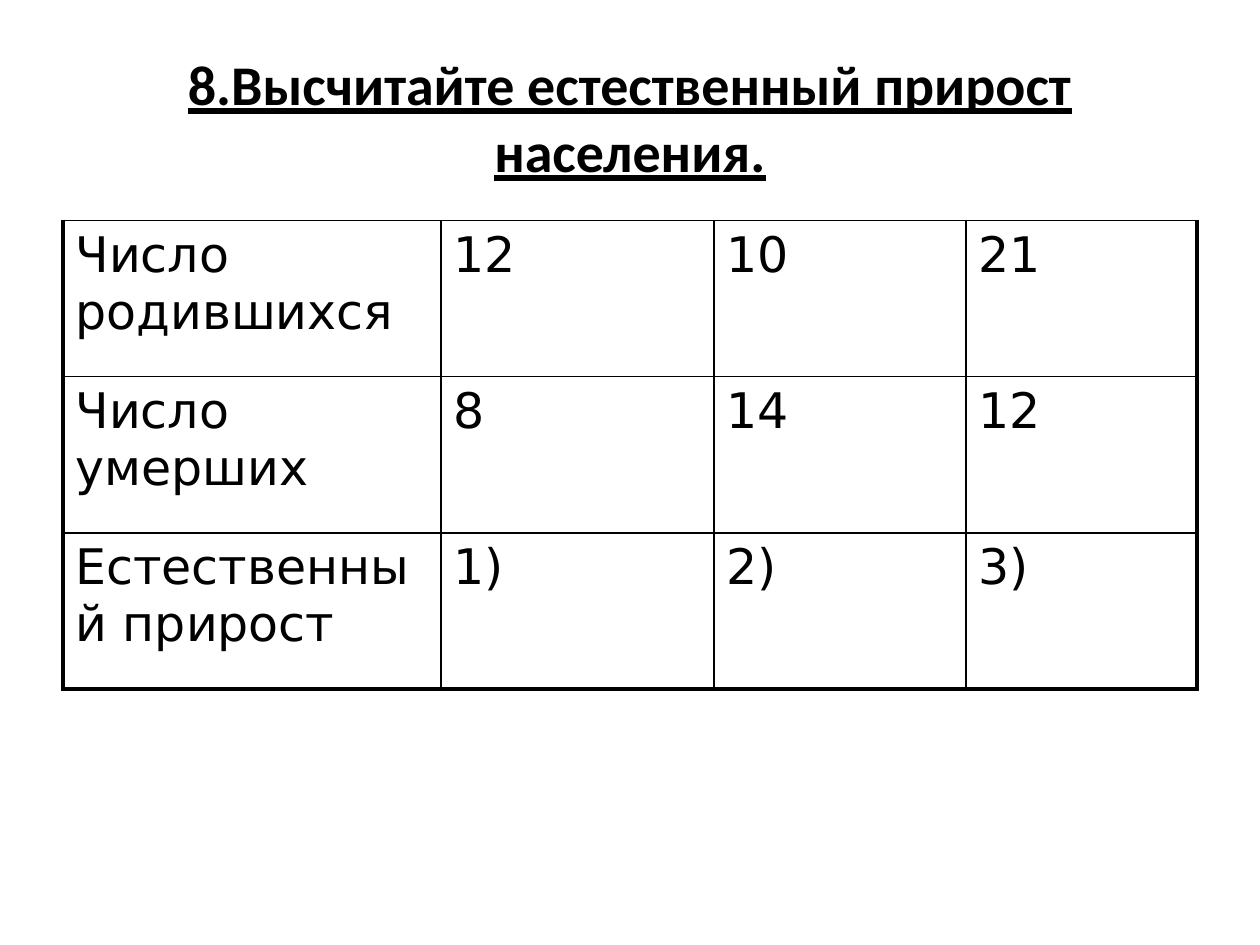
import pptx
import pptx.dml.color
import pptx.enum.text
import pptx.oxml
import pptx.oxml.ns
import pptx.util

Pt = pptx.util.Pt
BLACK = pptx.dml.color.RGBColor(0, 0, 0)
THIN, THICK = 1, 2.25

ROWS = [
    ["Число родившихся", "12", "10", "21"],
    ["Число умерших", "8", "14", "12"],
    ["Естественный прирост", "1)", "2)", "3)"],
]
COLUMN_WIDTHS = [216, 156, 144, 132]
ROW_HEIGHT = 89.25


def add_border(cell, side, width):
    cell.get_or_add_tcPr() if hasattr(cell, "get_or_add_tcPr") else None
    line = pptx.oxml.parse_xml(
        f'<a:ln{side} {pptx.oxml.ns.nsdecls("a")} w="{Pt(width)}">'
        f'<a:solidFill><a:srgbClr val="{BLACK}"/></a:solidFill></a:ln{side}>'
    )
    cell._tc.get_or_add_tcPr().append(line)


def style_text(para, font_name, size):
    for span in para.runs:
        span.font.name = font_name
        span.font.size = Pt(size)
        span.font.color.rgb = BLACK


deck = pptx.Presentation()
deck.slide_width, deck.slide_height = Pt(720), Pt(540)
page = deck.slides.add_slide(deck.slide_layouts[5])

# Title
title = page.shapes.title
title.left, title.top, title.width, title.height = Pt(36), Pt(21.6), Pt(648), Pt(90)
title.text_frame.text = "8.Высчитайте естественный прирост населения."
title.text_frame.word_wrap = True
title.text_frame.vertical_anchor = pptx.enum.text.MSO_ANCHOR.MIDDLE
para = title.text_frame.paragraphs[0]
para.alignment = pptx.enum.text.PP_ALIGN.CENTER
style_text(para, "Calibri", 32)
para.runs[0].font.bold = True
para.runs[0].font.underline = True

# Population table
table = page.shapes.add_table(
    len(ROWS), len(COLUMN_WIDTHS), Pt(36), Pt(126),
    Pt(sum(COLUMN_WIDTHS)), Pt(ROW_HEIGHT * len(ROWS)),
).table
table.first_row = False
table.horz_banding = False
for column, width in zip(table.columns, COLUMN_WIDTHS):
    column.width = Pt(width)

last_row, last_column = len(ROWS) - 1, len(COLUMN_WIDTHS) - 1
for r, values in enumerate(ROWS):
    table.rows[r].height = Pt(ROW_HEIGHT)
    for c, value in enumerate(values):
        cell = table.cell(r, c)
        cell.text_frame.text = value
        style_text(cell.text_frame.paragraphs[0], "DejaVu Sans", 28)
        # Thick outline on the left, right and bottom; thin lines elsewhere
        add_border(cell, "L", THICK if c == 0 else THIN)
        add_border(cell, "R", THICK if c == last_column else THIN)
        add_border(cell, "T", THIN)
        add_border(cell, "B", THICK if r == last_row else THIN)
        cell.fill.background()

deck.save("out.pptx")
